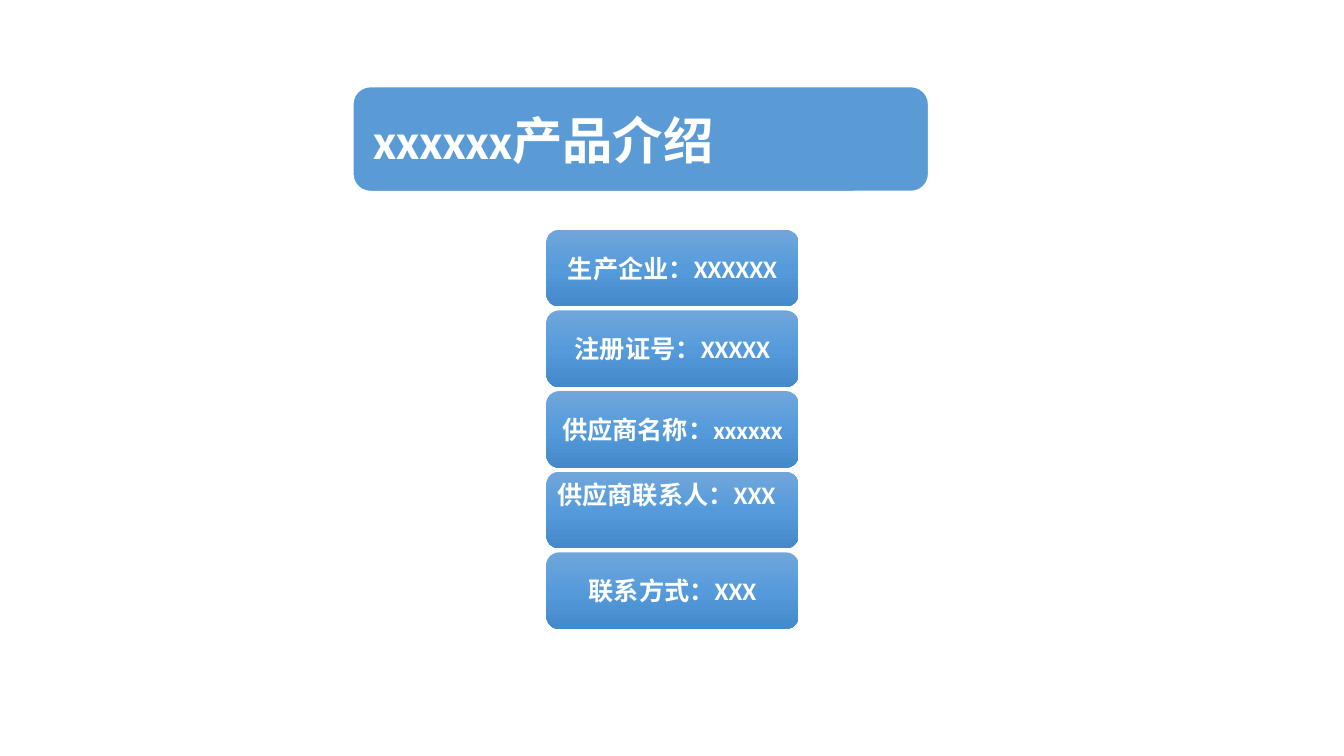
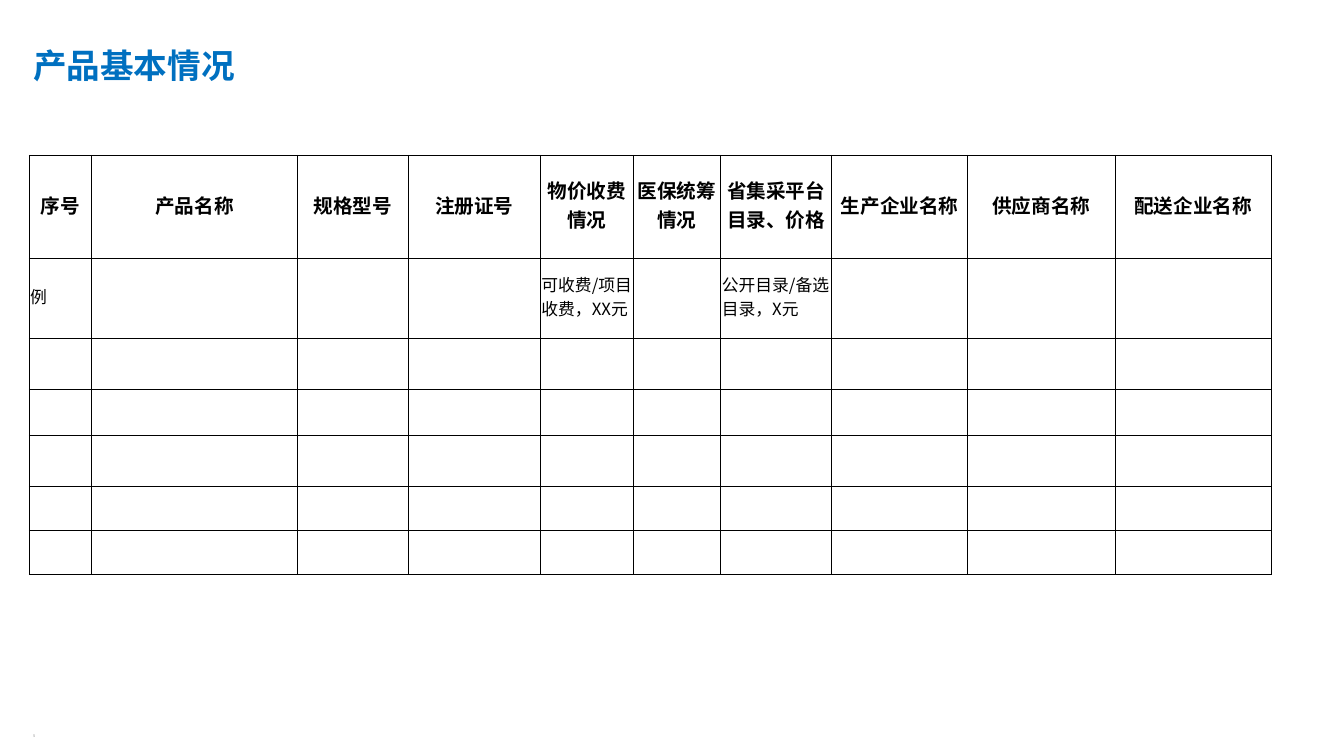
from copy import deepcopy
from dataclasses import dataclass

from pptx import Presentation
from pptx.dml.color import RGBColor
from pptx.enum.shapes import MSO_SHAPE
from pptx.enum.text import MSO_ANCHOR, PP_ALIGN
from pptx.oxml.ns import qn
from pptx.oxml.xmlchemy import OxmlElement
from pptx.util import Inches, Pt

ROUNDED = MSO_SHAPE.ROUNDED_RECTANGLE
TOP, MIDDLE = MSO_ANCHOR.TOP, MSO_ANCHOR.MIDDLE
LEFT, CENTER = PP_ALIGN.LEFT, PP_ALIGN.CENTER

# Content
COVER_TITLE = "xxxxxx产品介绍"
COVER_FACTS = [
    # text, alignment, anchor
    ("生产企业：XXXXXX", CENTER, MIDDLE),
    ("注册证号：XXXXX", CENTER, MIDDLE),
    ("供应商名称：xxxxxx", CENTER, MIDDLE),
    ("供应商联系人：XXX", LEFT, TOP),
    ("联系方式：XXX", CENTER, MIDDLE),
]
TABLE_TITLE = "产品基本情况"
PAGE_NUMBER = "5"
COLUMNS = [
    # heading, width, example
    ("序号", 0.62, "例"),
    ("产品名称", 2.04, ""),
    ("规格型号", 1.1, ""),
    ("注册证号", 1.31, ""),
    ("物价收费情况", 0.92, "可收费/项目收费，XX元"),
    ("医保统筹情况", 0.87, ""),
    ("省集采平台目录、价格", 1.1, "公开目录/备选目录，X元"),
    ("生产企业名称", 1.35, ""),
    ("供应商名称", 1.46, ""),
    ("配送企业名称", 1.55, ""),
]
ROW_HEIGHTS = [1.02, 0.8, 0.5, 0.46, 0.5, 0.44, 0.44]


@dataclass(frozen=True)
class Theme:
    white: str = "FFFFFF"
    black: str = "000000"
    banner: str = "5B9BD5"
    gradient: tuple = ("71A6DB", "559BDB", "448ACA")
    heading: str = "0070C0"
    muted: str = "8C8C8C"
    latin: str = "Calibri"
    table_latin: str = "Arial"
    chinese: str = "Noto Sans CJK SC"
    banner_size: float = 36
    heading_size: float = 24
    fact_size: float = 18
    header_size: float = 14
    body_size: float = 12
    number_size: float = 3
    border: float = 0.5


THEME = Theme()


def rgb(value):
    return RGBColor.from_string(value)


def write(frame, text, size, color, latin, bold=False, align=LEFT):
    """Put one styled paragraph in a text frame."""
    para = frame.paragraphs[0]
    para.text, para.alignment = text, align
    font = para.font
    font.size, font.bold, font.name = Pt(size), bold, latin
    font.color.rgb = rgb(color)
    east_asian = OxmlElement("a:ea")
    east_asian.set("typeface", THEME.chinese)
    para._p.pPr.find(qn("a:defRPr")).find(qn("a:latin")).addnext(east_asian)


def set_margins(target, left, top, right, bottom):
    target.margin_left, target.margin_top = Inches(left), Inches(top)
    target.margin_right, target.margin_bottom = Inches(right), Inches(bottom)


def add_rounded_box(page, area):
    box = page.shapes.add_shape(ROUNDED, *map(Inches, area))
    box.shadow.inherit = False
    box.text_frame.word_wrap = True
    return box


def add_text(page, area, text, anchor, *style, **options):
    box = page.shapes.add_textbox(*map(Inches, area))
    box.text_frame.word_wrap = True
    box.text_frame.vertical_anchor = anchor
    write(box.text_frame, text, *style, **options)


def fill_gradient(box, colors):
    """Blend evenly spaced colours from top to bottom."""
    box.fill.gradient()
    box.fill.gradient_angle = 270
    stops = box._element.spPr.find(qn("a:gradFill")).find(qn("a:gsLst"))
    while len(stops) < len(colors):
        stops.append(deepcopy(stops[0]))
    for index, (stop, color) in enumerate(zip(box.fill.gradient_stops, colors)):
        stop.color.rgb = rgb(color)
        stop.position = index / (len(colors) - 1)


def draw_borders(cell):
    properties = cell._tc.get_or_add_tcPr()
    for index, side in enumerate(("a:lnL", "a:lnR", "a:lnT", "a:lnB")):
        line = OxmlElement(side)
        line.set("w", str(Pt(THEME.border)))
        solid, color = OxmlElement("a:solidFill"), OxmlElement("a:srgbClr")
        color.set("val", THEME.black)
        solid.append(color)
        line.append(solid)
        properties.insert(index, line)


def build_cover(page):
    # Banner
    banner = add_rounded_box(page, (3.5, 0.86, 5.71, 1.04))
    banner.fill.solid()
    banner.fill.fore_color.rgb = rgb(THEME.banner)
    banner.line.color.rgb = rgb(THEME.white)
    banner.line.width = Pt(1)
    banner.text_frame.vertical_anchor = MIDDLE
    set_margins(banner.text_frame, 0.15, 0.15, 0.15, 0.15)
    write(banner.text_frame, COVER_TITLE, THEME.banner_size, THEME.white,
          THEME.latin, bold=True)

    # Stack of facts
    left, top, width, height, gap = 5.42, 2.28, 2.5, 0.76, 0.04
    for index, (text, align, anchor) in enumerate(COVER_FACTS):
        box = add_rounded_box(
            page, (left, top + index * (height + gap), width, height))
        fill_gradient(box, THEME.gradient)
        box.line.fill.background()
        box.text_frame.vertical_anchor = anchor
        set_margins(box.text_frame, 0.07, 0.04, 0.07, 0.04)
        write(box.text_frame, text, THEME.fact_size, THEME.white,
              THEME.latin, bold=True, align=align)


def build_product_table(page):
    # Page number
    add_text(page, (0.23, 7.22, 0.28, 0.16), PAGE_NUMBER, MIDDLE,
             THEME.number_size, THEME.muted, THEME.latin)

    # Table grid
    headings, widths, examples = zip(*COLUMNS)
    area = (0.29, 1.54, sum(widths), sum(ROW_HEIGHTS))
    table = page.shapes.add_table(
        len(ROW_HEIGHTS), len(COLUMNS), *map(Inches, area)).table
    table.first_row = table.horz_banding = False
    for column, width in zip(table.columns, widths):
        column.width = Inches(width)
    for row, height in zip(table.rows, ROW_HEIGHTS):
        row.height = Inches(height)

    # Table cells
    blank_row = [""] * len(COLUMNS)
    rows = [headings, examples] + [blank_row] * (len(ROW_HEIGHTS) - 2)
    for row_index, texts in enumerate(rows):
        if row_index == 0:
            size, latin, bold, align = (
                THEME.header_size, THEME.table_latin, True, CENTER)
        else:
            size, latin, bold, align = (
                THEME.body_size, THEME.chinese, False, LEFT)
        for column_index, text in enumerate(texts):
            cell = table.cell(row_index, column_index)
            cell.fill.background()
            cell.vertical_anchor = MIDDLE
            set_margins(cell, 0.01, 0.01, 0.01, 0.05)
            draw_borders(cell)
            write(cell.text_frame, text, size, THEME.black, latin,
                  bold=bold, align=align)

    # Heading
    add_text(page, (0.23, 0.4, 6.67, 0.5), TABLE_TITLE, TOP,
             THEME.heading_size, THEME.heading, THEME.chinese, bold=True)


def main():
    deck = Presentation()
    deck.slide_width, deck.slide_height = Inches(13.33), Inches(7.5)
    blank = deck.slide_layouts[6]
    for build in (build_cover, build_product_table):
        build(deck.slides.add_slide(blank))
    deck.save("out.pptx")


if __name__ == "__main__":
    main()
